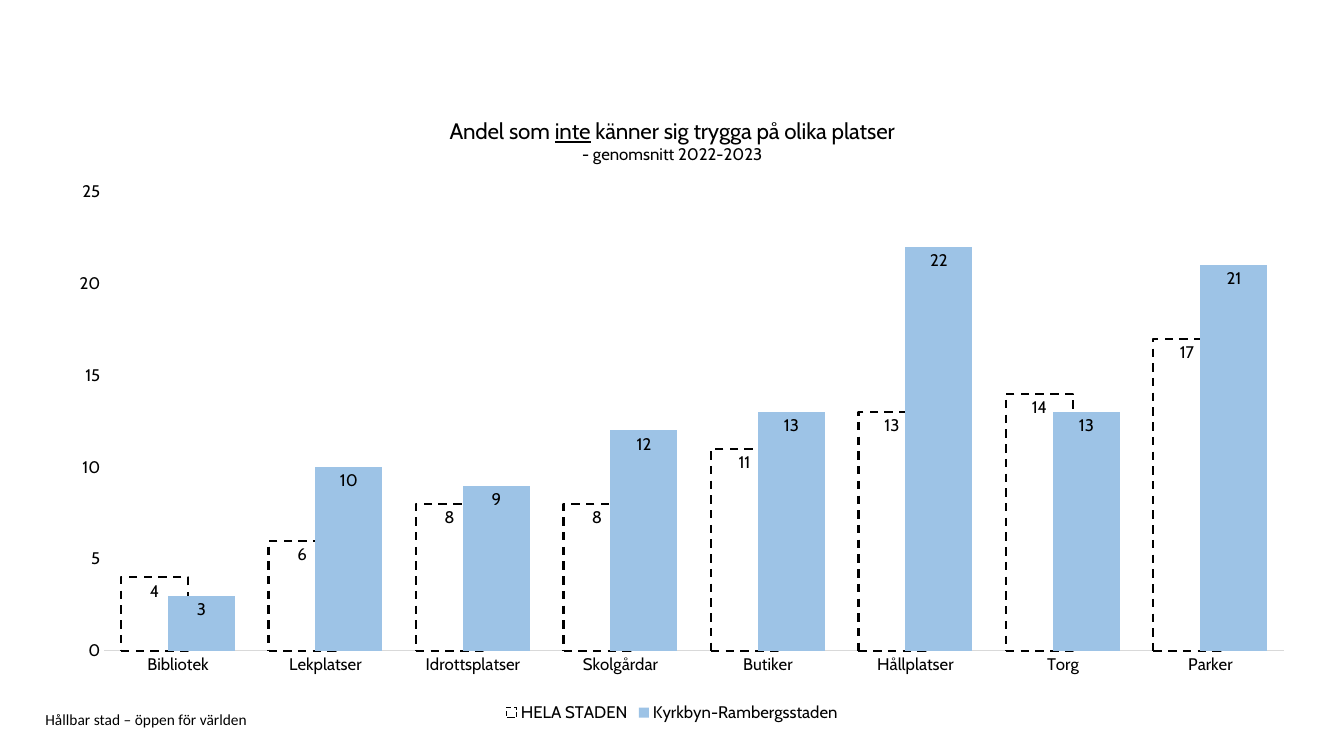
"""Build a slide with a column chart of perceived safety at different places."""
from pptx import Presentation
from pptx.chart.data import CategoryChartData
from pptx.dml.color import RGBColor
from pptx.enum.chart import (XL_CHART_TYPE, XL_LABEL_POSITION as LabelPos,
                             XL_LEGEND_POSITION as LegendPos, XL_TICK_MARK as Tick)
from pptx.enum.dml import MSO_LINE
from pptx.enum.text import MSO_ANCHOR
from pptx.oxml import parse_xml
from pptx.oxml.ns import nsdecls
from pptx.util import Pt

COLORS = {"black": "000000", "white": "FFFFFF", "blue": "9DC3E6", "axis": "D9D9D9"}


def rgb(name):
    return RGBColor.from_string(COLORS[name])


def set_font(font, **values):
    font.color.rgb = rgb("black")
    for key, value in values.items():
        setattr(font, key, value)


deck = Presentation()
deck.slide_width, deck.slide_height = Pt(960), Pt(540)
slide = deck.slides.add_slide(deck.slide_layouts[6])

slogan = slide.shapes.add_textbox(Pt(32.4), Pt(508.3), Pt(680.4), Pt(11.5)).text_frame
slogan_format = {"word_wrap": True, "vertical_anchor": MSO_ANCHOR.MIDDLE,
                 "margin_left": 0, "margin_right": 0, "margin_top": 0, "margin_bottom": 0}
for key, value in slogan_format.items():
    setattr(slogan, key, value)
slogan_run = slogan.paragraphs[0].add_run()
slogan_run.text = "Hållbar stad – öppen för världen"
set_font(slogan_run.font, name="Calibri", size=Pt(11))

shares = CategoryChartData(number_format="0")
shares.categories = ["Bibliotek", "Lekplatser", "Idrottsplatser", "Skolgårdar",
                     "Butiker", "Hållplatser", "Torg", "Parker"]
shares.add_series("HELA STADEN", [4, 6, 8, 8, 11, 13, 14, 17])
shares.add_series("Kyrkbyn-Rambergsstaden", [3, 10, 9, 12, 13, 22, 13, 21])
chart = slide.shapes.add_chart(XL_CHART_TYPE.COLUMN_CLUSTERED, Pt(32.4), Pt(68.4),
                               Pt(895.7), Pt(450.7), shares).chart
set_font(chart.font, name="Cabin", size=Pt(12))

heading = chart.chart_title.text_frame
heading_lines = [
    (16, [("Andel som ", False), ("inte", True), (" känner sig trygga på olika platser", False)]),
    (12, [("- genomsnitt 2022-2023", False)]),
]
for index, (size, parts) in enumerate(heading_lines):
    line = heading.add_paragraph() if index else heading.paragraphs[0]
    for text, underlined in parts:
        run = line.add_run()
        run.text = text
        set_font(run.font, name="Cabin", size=Pt(size), bold=False, underline=underlined)

chart.has_legend = True
chart.legend.position = LegendPos.BOTTOM
chart.legend.include_in_layout = False

places, percent = chart.category_axis, chart.value_axis
for axis in (places, percent):
    axis.major_tick_mark = axis.minor_tick_mark = Tick.NONE
    axis.has_major_gridlines = False
places.format.line.color.rgb = rgb("axis")
places.format.line.width = Pt(0.75)
percent.format.line.fill.background()
percent.minimum_scale, percent.maximum_scale, percent.major_unit = 0, 25, 5
percent.tick_labels.number_format = "0"
percent.tick_labels.number_format_is_linked = False

columns = chart.plots[0]
columns.gap_width, columns.overlap, columns.vary_by_categories = 50, 30, False
label_format = {"show_value": True, "position": LabelPos.INSIDE_END,
                "number_format": "0", "number_format_is_linked": False}
for series, fill in zip(columns.series, ("white", "blue")):
    series.format.fill.solid()
    series.format.fill.fore_color.rgb = rgb(fill)
    series.invert_if_negative = False
    for key, value in label_format.items():
        setattr(series.data_labels, key, value)
whole_city, district = columns.series
whole_city.format.line.color.rgb = rgb("black")
whole_city.format.line.width = Pt(1.5)
whole_city.format.line.dash_style = MSO_LINE.DASH
district.format.line.fill.background()

plot_area = chart.element.xpath("c:chart/c:plotArea")[0]
for layout in plot_area.xpath("c:layout"):
    plot_area.remove(layout)
plot_area.insert(0, parse_xml(
    f'<c:layout {nsdecls("c")}><c:manualLayout><c:layoutTarget val="inner"/>'
    '<c:xMode val="edge"/><c:yMode val="edge"/><c:x val="0.047"/><c:y val="0.152"/>'
    '<c:w val="0.941"/><c:h val="0.728"/></c:manualLayout></c:layout>'))

deck.save("out.pptx")
